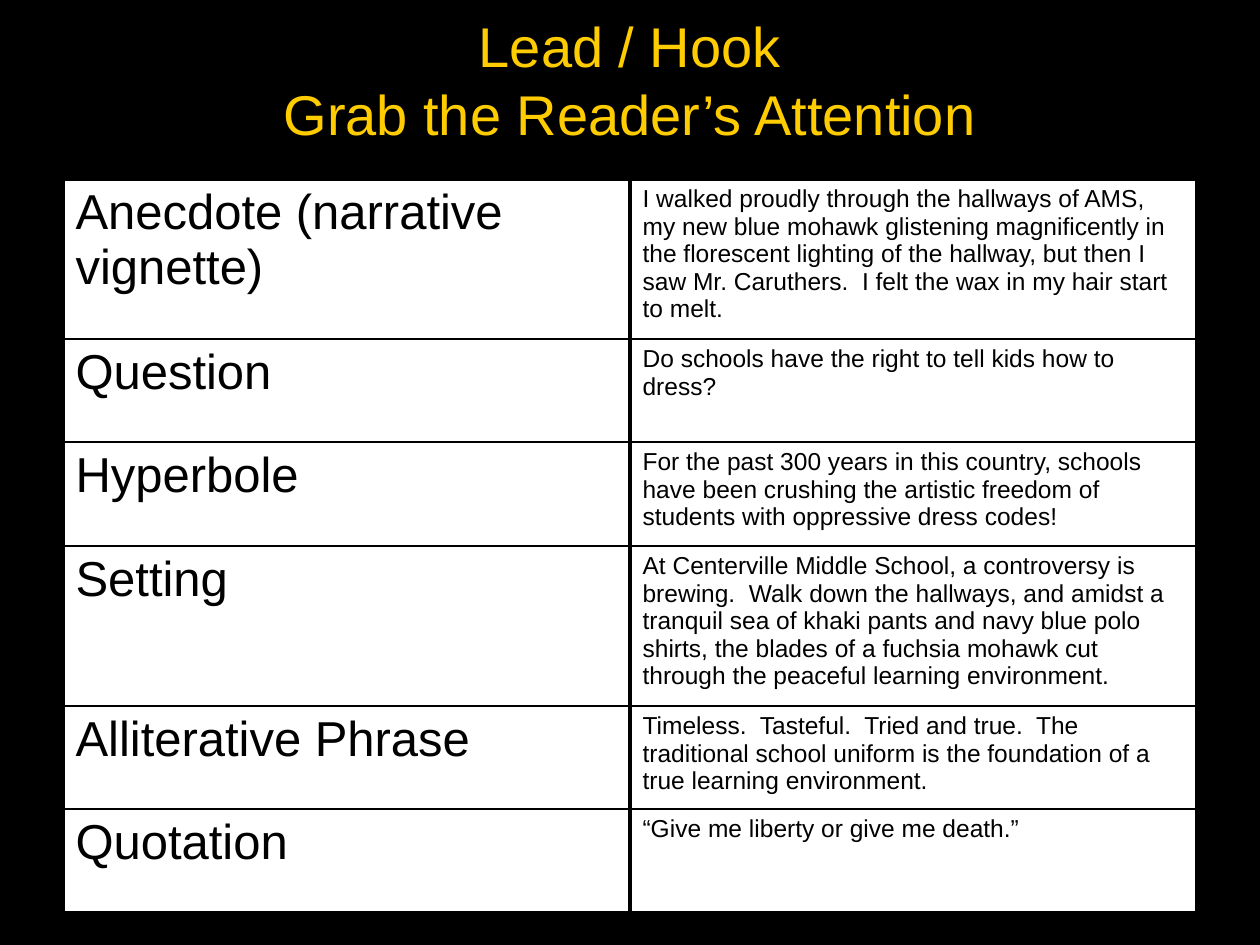
from lxml import etree
from pptx import Presentation
from pptx.dml.color import RGBColor
from pptx.enum.text import MSO_ANCHOR, PP_ALIGN
from pptx.oxml.ns import qn
from pptx.util import Emu, Pt

CENTER = PP_ALIGN.CENTER
MIDDLE = MSO_ANCHOR.MIDDLE

EMU_PER_PX = 914400 / 126
FONT = "Arial"
COLORS = {"background": "000000", "title": "FFCC00", "cell": "FFFFFF",
          "text": "000000", "border": "000000"}
OUTER_LINE, INNER_LINE = 2.25, 1

TITLE = "Lead / Hook\vGrab the Reader’s Attention"
COLUMN_WIDTH = 567
COLUMN_SIZES = (28, 14)

# Row height, kind of hook, example
HOOKS = [
    (160, "Anecdote (narrative vignette)",
     "I walked proudly through the hallways of AMS, my new blue mohawk "
     "glistening magnificently in the florescent lighting of the hallway, "
     "but then I saw Mr. Caruthers.  I felt the wax in my hair start to melt."),
    (103, "Question",
     "Do schools have the right to tell kids how to dress?"),
    (104, "Hyperbole",
     "For the past 300 years in this country, schools have been crushing the "
     "artistic freedom of students with oppressive dress codes!"),
    (160, "Setting",
     "At Centerville Middle School, a controversy is brewing.  Walk down the "
     "hallways, and amidst a tranquil sea of khaki pants and navy blue polo "
     "shirts, the blades of a fuchsia mohawk cut through the peaceful "
     "learning environment."),
    (103, "Alliterative Phrase",
     "Timeless.  Tasteful.  Tried and true.  The traditional school uniform "
     "is the foundation of a true learning environment."),
    (104, "Quotation", "“Give me liberty or give me death.”"),
]


def px(length):
    return Emu(int(length * EMU_PER_PX))


def color(name):
    return RGBColor.from_string(COLORS[name])


def style_text(paragraph, size, color_name):
    paragraph.font.name = FONT
    paragraph.font.size = Pt(size)
    paragraph.font.color.rgb = color(color_name)


def add_title(slide):
    title = slide.shapes.add_textbox(px(63), px(0), px(1134), px(158))
    frame = title.text_frame
    frame.word_wrap = True
    frame.vertical_anchor = MIDDLE
    frame.text = TITLE
    heading = frame.paragraphs[0]
    heading.alignment = CENTER
    style_text(heading, 32, "title")


def set_border(cell, side, width):
    properties = cell._tc.get_or_add_tcPr()
    line = etree.SubElement(properties, qn(f"a:ln{side}"), w=str(Pt(width)))
    fill = etree.SubElement(line, qn("a:solidFill"))
    etree.SubElement(fill, qn("a:srgbClr"), val=COLORS["border"])


def fill_cell(cell, text, size, top_line, bottom_line):
    cell.text = text
    style_text(cell.text_frame.paragraphs[0], size, "text")
    for side, width in (("L", OUTER_LINE), ("R", OUTER_LINE),
                        ("T", top_line), ("B", bottom_line)):
        set_border(cell, side, width)
    cell.fill.solid()
    cell.fill.fore_color.rgb = color("cell")


def add_hook_table(slide):
    columns = len(COLUMN_SIZES)
    height = sum(hook[0] for hook in HOOKS)
    table = slide.shapes.add_table(len(HOOKS), columns, px(63), px(179),
                                   px(columns * COLUMN_WIDTH), px(height)).table
    table.first_row = False
    table.horz_banding = False
    last = len(HOOKS) - 1
    for row, (row_height, *texts) in enumerate(HOOKS):
        table.rows[row].height = px(row_height)
        top_line = OUTER_LINE if row == 0 else INNER_LINE
        bottom_line = OUTER_LINE if row == last else INNER_LINE
        for column, (text, size) in enumerate(zip(texts, COLUMN_SIZES)):
            fill_cell(table.cell(row, column), text, size, top_line, bottom_line)


def main():
    presentation = Presentation()
    presentation.slide_width = px(1260)
    presentation.slide_height = px(945)
    slide = presentation.slides.add_slide(presentation.slide_layouts[6])
    slide.background.fill.solid()
    slide.background.fill.fore_color.rgb = color("background")
    add_title(slide)
    add_hook_table(slide)
    presentation.save("out.pptx")


if __name__ == "__main__":
    main()
